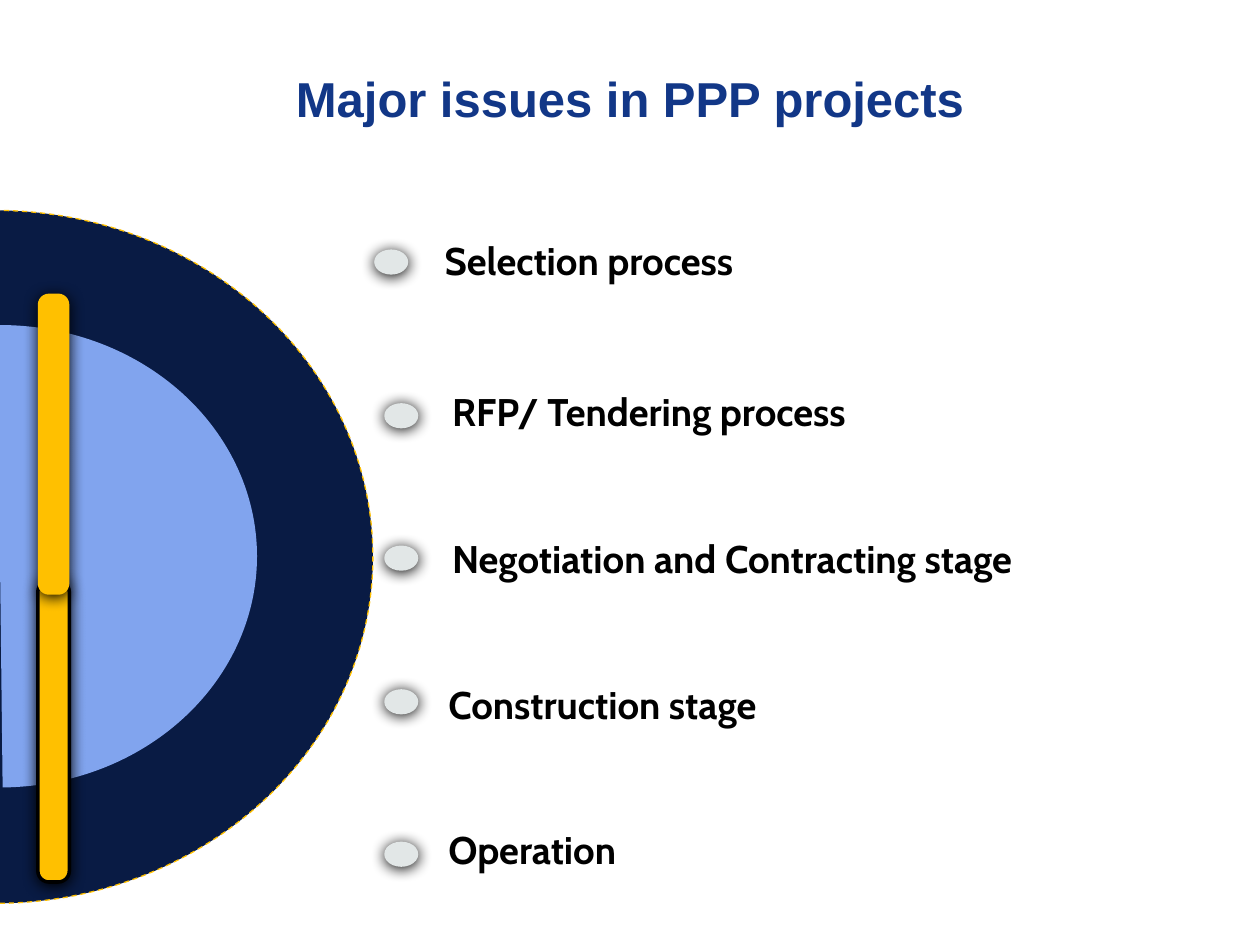
"""Build the slide on major issues in PPP projects."""
from dataclasses import dataclass
from typing import Optional

from lxml.etree import SubElement
from pptx import Presentation
from pptx.dml.color import RGBColor
from pptx.enum.dml import MSO_LINE
from pptx.enum.shapes import MSO_SHAPE
from pptx.enum.text import MSO_ANCHOR, MSO_AUTO_SIZE, PP_ALIGN
from pptx.oxml.ns import qn
from pptx.shapes.autoshape import Shape
from pptx.slide import Slide
from pptx.text.text import Font
from pptx.util import Inches, Pt

TITLE_BLUE = RGBColor(0x12, 0x37, 0x87)
NAVY = RGBColor(0x09, 0x1B, 0x44)
LIGHT_BLUE = RGBColor(0x81, 0xA4, 0xEE)
GOLD = RGBColor(0xFF, 0xC0, 0x00)
PALE_GREY = RGBColor(0xE2, 0xE7, 0xE7)
BLACK = RGBColor(0x00, 0x00, 0x00)


@dataclass
class Box:
    left: float
    top: float
    width: float
    height: float

    def lengths(self) -> tuple:
        return tuple(Inches(value) for value in (self.left, self.top, self.width, self.height))


@dataclass
class Issue:
    text: str
    left: float
    top: float
    width: float
    dot_left: float
    dot_top: float


@dataclass
class HalfDisc:
    box: Box
    end_angle: float
    fill: RGBColor
    outline: Optional[RGBColor] = None


@dataclass
class Bar:
    top: float
    outline: Optional[RGBColor] = None


ISSUES = [
    Issue("Selection process", 3.43, 1.83, 3.07, 2.97, 1.98),
    Issue("RFP/ Tendering process", 3.49, 3.03, 4.36, 3.05, 3.2),
    Issue("Negotiation and Contracting stage", 3.49, 4.2, 5.26, 3.05, 4.33),
    Issue("Construction stage", 3.46, 5.36, 4.42, 3.05, 5.47),
    Issue("Operation", 3.46, 6.51, 4.42, 3.05, 6.68),
]
HALF_DISCS = [
    HalfDisc(Box(-3.04, 1.67, 6, 5.5), 54.18, NAVY, GOLD),
    HalfDisc(Box(-2.04, 2.58, 4.08, 3.67), 53.6, LIGHT_BLUE),
]
BARS = [Bar(4.61, BLACK), Bar(2.33)]


def format_font(font: Font, name: str, size: float, color: RGBColor) -> None:
    font.name = name
    font.size = Pt(size)
    font.bold = True
    font.color.rgb = color


def add_filled_shape(slide: Slide, kind: MSO_SHAPE, box: Box, fill: RGBColor) -> Shape:
    shape = slide.shapes.add_shape(kind, *box.lengths())
    shape.shadow.inherit = False
    shape.fill.solid()
    shape.fill.fore_color.rgb = fill
    shape.line.fill.background()
    return shape


def set_outline(shape: Shape, color: RGBColor, width: float) -> None:
    shape.line.color.rgb = color
    shape.line.width = Pt(width)


def add_soft_shadow(shape: Shape) -> None:
    effects = shape._element.spPr.find(qn("a:effectLst"))
    shadow = SubElement(effects, qn("a:outerShdw"), blurRad=str(Pt(8.5)), dist=str(Pt(1)),
                        dir="5400000", algn="ctr", rotWithShape="0")
    SubElement(shadow, qn("a:srgbClr"), val=str(BLACK))


def add_title(slide: Slide, text: str) -> None:
    title = slide.shapes.title
    title.left, title.top, title.width, title.height = Box(0.5, 0.3, 9, 0.95).lengths()
    title.text_frame.text = text
    title.text_frame.vertical_anchor = MSO_ANCHOR.MIDDLE
    paragraph = title.text_frame.paragraphs[0]
    paragraph.alignment = PP_ALIGN.CENTER
    format_font(paragraph.runs[0].font, "Arial", 28, TITLE_BLUE)


def add_half_disc(slide: Slide, disc: HalfDisc) -> None:
    shape = add_filled_shape(slide, MSO_SHAPE.ARC, disc.box, disc.fill)
    shape.adjustments[0] = 162
    shape.adjustments[1] = disc.end_angle
    if disc.outline is not None:
        set_outline(shape, disc.outline, 0.75)
        shape.line.dash_style = MSO_LINE.DASH


def add_bar(slide: Slide, bar: Bar) -> None:
    box = Box(0.3, bar.top, 0.25, 2.39)
    shape = add_filled_shape(slide, MSO_SHAPE.ROUNDED_RECTANGLE, box, GOLD)
    shape.adjustments[0] = 0.35
    shape.rotation = 180
    if bar.outline is not None:
        set_outline(shape, bar.outline, 2)
    add_soft_shadow(shape)


def add_issue(slide: Slide, issue: Issue) -> None:
    label = slide.shapes.add_textbox(*Box(issue.left, issue.top, issue.width, 0.47).lengths())
    label.text_frame.word_wrap = True
    label.text_frame.auto_size = MSO_AUTO_SIZE.SHAPE_TO_FIT_TEXT
    label.text_frame.text = issue.text
    format_font(label.text_frame.paragraphs[0].runs[0].font, "Cabin", 22, BLACK)
    dot_box = Box(issue.dot_left, issue.dot_top, 0.27, 0.2)
    add_soft_shadow(add_filled_shape(slide, MSO_SHAPE.OVAL, dot_box, PALE_GREY))


def main() -> None:
    presentation = Presentation()
    presentation.slide_width = Inches(10)
    presentation.slide_height = Inches(7.5)
    slide = presentation.slides.add_slide(presentation.slide_layouts[5])
    add_title(slide, "Major issues in PPP projects")
    for disc in HALF_DISCS:
        add_half_disc(slide, disc)
    for bar in BARS:
        add_bar(slide, bar)
    for issue in ISSUES:
        add_issue(slide, issue)
    presentation.save("out.pptx")


if __name__ == "__main__":
    main()
